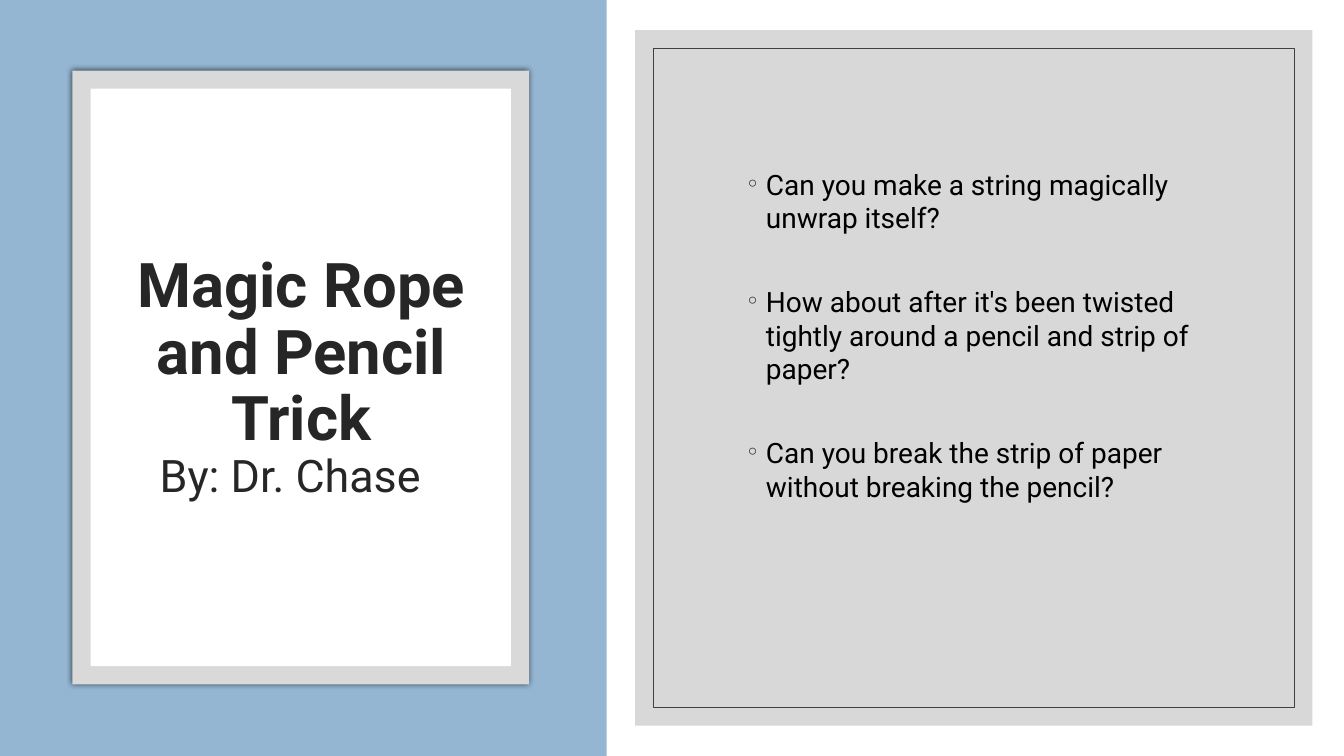
from dataclasses import dataclass

from lxml import etree
from pptx import Presentation
from pptx import util as u
from pptx.dml import color
from pptx.enum import shapes, text
from pptx.oxml import ns


@dataclass(frozen=True)
class Theme:
    font: str = "Roboto"
    paper: str = "FFFFFF"
    blue: str = "94B6D2"
    frame: str = "D9D9D9"
    panel: str = "BFBFBF"
    rule: str = "404040"
    heading: str = "262626"
    body: str = "000000"
    shadow: str = "000000"
    title_size: int = 44
    author_size: int = 32
    body_size: int = 20


THEME = Theme()
WIDTH, HEIGHT = 960, 540
BORDER = 13  # gap between each outer frame and the rectangle inside it

QUESTIONS = [
    "Can you make a string magically unwrap itself?",
    "How about after it's been twisted tightly around a pencil and strip of paper?",
    "Can you break the strip of paper without breaking the pencil?",
]


def rgb(value):
    return color.RGBColor.from_string(value)


def apply(target, formats):
    for name, value in formats.items():
        setattr(target, name, value)


def add_xml(parent, tag, **attributes):
    return etree.SubElement(parent, ns.qn(tag), attributes)


def inset(box, gap):
    left, top, width, height = box
    return left + gap, top + gap, width - 2 * gap, height - 2 * gap


def add_rectangle(slide, box, fill=None, line=None):
    rectangle = slide.shapes.add_shape(
        shapes.MSO_SHAPE.RECTANGLE, *(u.Pt(length) for length in box))
    rectangle.shadow.inherit = False
    if fill:
        rectangle.fill.solid()
        rectangle.fill.fore_color.rgb = rgb(fill)
    else:
        rectangle.fill.background()
    if line:
        rectangle.line.color.rgb = rgb(line)
        rectangle.line.width = u.Pt(0.5)
    else:
        rectangle.line.fill.background()
    return rectangle


def add_text_frame(slide, box, **formats):
    frame = slide.shapes.add_textbox(*(u.Pt(length) for length in box)).text_frame
    apply(frame, {"word_wrap": True,
                  "vertical_anchor": text.MSO_ANCHOR.MIDDLE, **formats})
    return frame


def add_paragraph(frame, index, words, size, ink, bold=False, **formats):
    paragraph = frame.paragraphs[0] if index == 0 else frame.add_paragraph()
    apply(paragraph, formats)
    run = paragraph.add_run()
    run.text = words
    apply(run.font, {"name": THEME.font, "size": u.Pt(size), "bold": bold})
    run.font.color.rgb = rgb(ink)
    return paragraph


def title_region(slide, box):
    """Blue band with a framed card that carries the title and author."""
    left, top, _, _ = box
    add_rectangle(slide, box, THEME.blue)

    # Frame with a soft shadow, and the card within it
    frame_box = (left + 51.8, top + 50.4, 326.2, 438.5)
    frame = add_rectangle(slide, frame_box, THEME.frame)
    effects = frame._element.spPr.find(ns.qn("a:effectLst"))
    glow = add_xml(effects, "a:outerShdw", blurRad=str(u.Pt(4)), dist="0",
                   dir="0", algn="ctr", rotWithShape="0")
    shade = add_xml(glow, "a:srgbClr", val=THEME.shadow)
    add_xml(shade, "a:alpha", val="66000")
    add_rectangle(slide, inset(frame_box, BORDER), THEME.paper)

    # Title and author
    heading = add_text_frame(slide, (left + 77.8, top + 93.6, 275, 353.5))
    centred = {"alignment": text.PP_ALIGN.CENTER, "line_spacing": 0.9}
    add_paragraph(heading, 0, "Magic Rope and Pencil Trick",
                  THEME.title_size, THEME.heading, bold=True, **centred)
    author = add_paragraph(heading, 1, "By: Dr. Chase",
                           THEME.author_size, THEME.heading, **centred)
    # Right margin sets the author slightly left of centre
    author._p.get_or_add_pPr().set("marR", str(u.Pt(16)))


def question_region(slide, box):
    """Grey panel with an inner rule and the bulleted questions."""
    left, top, _, _ = box
    panel = add_rectangle(slide, box, THEME.panel)
    tint = panel._element.spPr.find(ns.qn("a:solidFill"))[0]
    add_xml(tint, "a:alpha", val="60000")
    add_rectangle(slide, inset(box, BORDER), line=THEME.rule)

    # The deep bottom margin lifts the list above the middle
    questions = add_text_frame(slide, (left + 50.4, top + 51.8, 383.8, 392.4),
                               margin_bottom=u.Pt(64))
    last = len(QUESTIONS) - 1
    for index, question in enumerate(QUESTIONS):
        paragraph = add_paragraph(questions, index, question,
                                  THEME.body_size, THEME.body,
                                  space_after=u.Pt(0 if index == last else 36))
        properties = paragraph._p.get_or_add_pPr()
        properties.set("marL", str(u.Pt(36)))
        properties.set("indent", str(u.Pt(-14.4)))
        bullet_colour = add_xml(properties, "a:buClr")
        add_xml(bullet_colour, "a:srgbClr", val=THEME.heading)
        add_xml(properties, "a:buSzPct", val="85000")
        add_xml(properties, "a:buFont", typeface=THEME.font)
        add_xml(properties, "a:buChar", char="◦")


def main():
    deck = Presentation()
    apply(deck, {"slide_width": u.Pt(WIDTH), "slide_height": u.Pt(HEIGHT)})
    slide = deck.slides.add_slide(deck.slide_layouts[6])
    add_rectangle(slide, (0, 0, WIDTH, HEIGHT), THEME.paper)
    title_region(slide, (0, 0, 433.4, HEIGHT))
    question_region(slide, (453.6, 21.6, 483.8, 496.8))
    deck.save("out.pptx")


if __name__ == "__main__":
    main()
